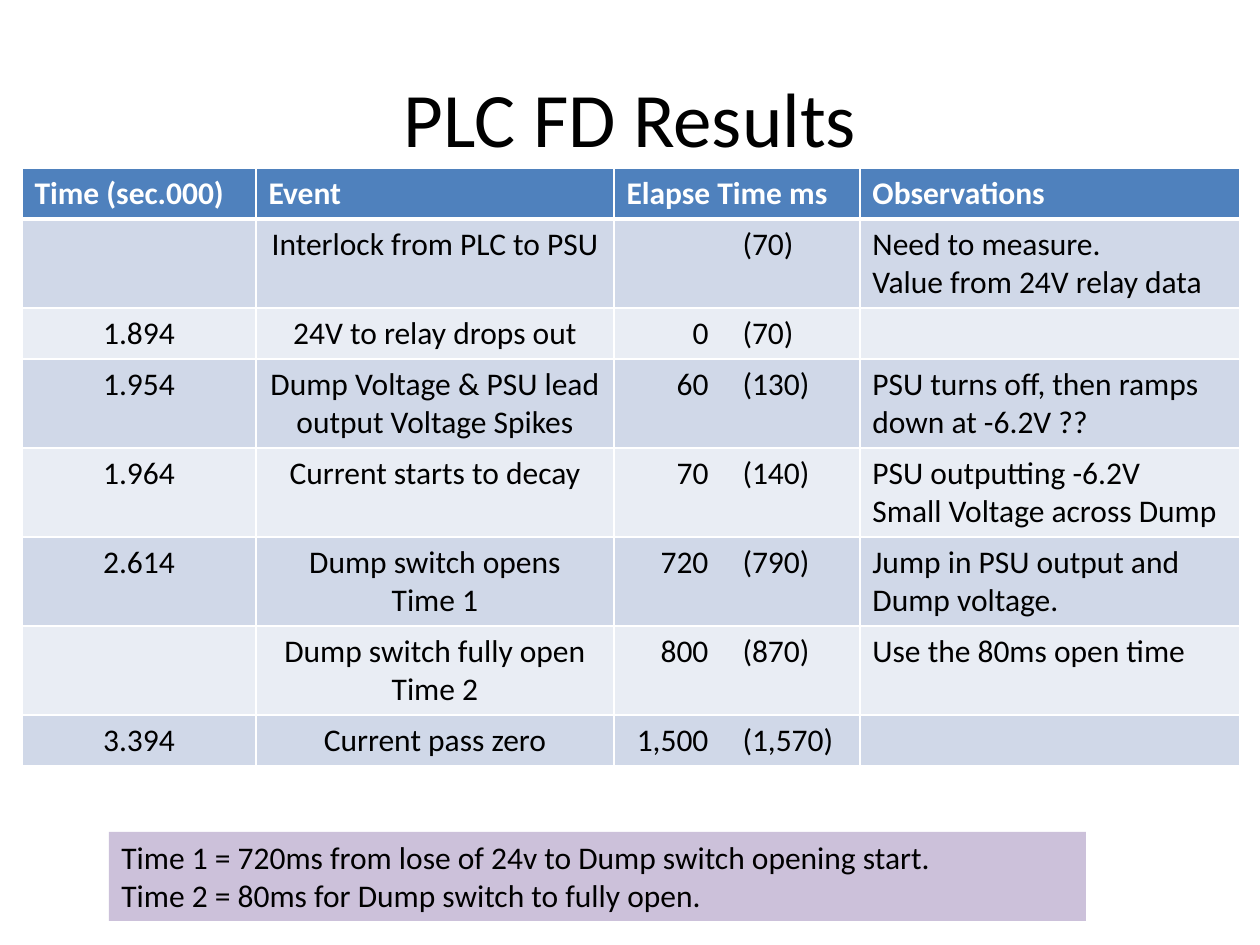
from lxml import etree
from pptx import Presentation
from pptx import util as u
from pptx.dml.color import RGBColor
from pptx.enum import shapes, text
from pptx.oxml import ns

PX = 914400 // 126
FONT = "Calibri"
BLACK = RGBColor(0x00, 0x00, 0x00)
WHITE = RGBColor(0xFF, 0xFF, 0xFF)
BLUE = RGBColor(0x4F, 0x81, 0xBD)
BANDS = (RGBColor(0xD0, 0xD8, 0xE8), RGBColor(0xE9, 0xED, 0xF4))
LILAC = RGBColor(0xCC, 0xC1, 0xDA)
LEFT, CENTER = text.PP_ALIGN.LEFT, text.PP_ALIGN.CENTER

COLUMN_WIDTHS = (234, 358, 246, 380)
COLUMN_ALIGNS = (CENTER, CENTER, LEFT, LEFT)
ELAPSED_COLUMN = 2
ELAPSED_TABS = ((82, "r"), (116, "l"))
ONE_LINE, TWO_LINES = 51, 89

HEADINGS = ("Time (sec.000)", "Event", "Elapse Time ms", "Observations")
# Elapsed times are tabbed: from relay drop-out, then from interlock
EVENTS = (
    (TWO_LINES, "", "Interlock from PLC to PSU", "\t\t(70)",
     "Need to measure.\nValue from 24V relay data"),
    (ONE_LINE, "1.894", "24V to relay drops out", "\t0\t(70)", ""),
    (TWO_LINES, "1.954", "Dump Voltage & PSU lead output Voltage Spikes",
     "\t60\t(130)", "PSU turns off, then ramps down at -6.2V ??"),
    (TWO_LINES, "1.964", "Current starts to decay", "\t70\t(140)",
     "PSU outputting -6.2V\nSmall Voltage across Dump"),
    (TWO_LINES, "2.614", "Dump switch opens\nTime 1", "\t720\t(790)",
     "Jump in PSU output and Dump voltage."),
    (TWO_LINES, "", "Dump switch fully open\nTime 2", "\t800\t(870)",
     "Use the 80ms open time"),
    (ONE_LINE, "3.394", "Current pass zero", "\t1,500\t(1,570)", ""),
)
NOTE = ("Time 1 = 720ms from lose of 24v to Dump switch opening start.\n"
        "Time 2 = 80ms for Dump switch to fully open.")


def px(*lengths):
    return [u.Emu(length * PX) for length in lengths]


def write(frame, words, size, color=BLACK, align=LEFT, bold=False):
    frame.text = words
    frame.word_wrap = True
    for para in frame.paragraphs:
        para.alignment = align
        para.font.size = u.Pt(size)
        for span in para.runs:
            span.font.name = FONT
            span.font.size = u.Pt(size)
            span.font.bold = bold
            span.font.color.rgb = color


def set_tabs(para):
    tabs = etree.Element(ns.qn("a:tabLst"))
    for position, align in ELAPSED_TABS:
        etree.SubElement(tabs, ns.qn("a:tab"), pos=str(position * PX), algn=align)
    properties = para._p.get_or_add_pPr()
    default_run = properties.find(ns.qn("a:defRPr"))
    default_run.addprevious(tabs)


def set_borders(cell, bottom):
    properties = cell._tc.get_or_add_tcPr()
    for side, width in (("L", 1), ("R", 1), ("T", 1), ("B", bottom)):
        line = etree.SubElement(properties, ns.qn(f"a:ln{side}"), w=str(u.Pt(width)))
        fill = etree.SubElement(line, ns.qn("a:solidFill"))
        etree.SubElement(fill, ns.qn("a:srgbClr"), val=str(WHITE))


def fill_cell(cell, words, fill, bottom=1, **style):
    set_borders(cell, bottom)
    cell.fill.solid()
    cell.fill.fore_color.rgb = fill
    write(cell.text_frame, words, 18, **style)


def add_title(page, words):
    box = page.shapes.add_textbox(*px(63, 38, 1134, 157))
    box.text_frame.vertical_anchor = text.MSO_ANCHOR.MIDDLE
    write(box.text_frame, words, 44, align=CENTER)


def add_results(page):
    heights = [ONE_LINE] + [event[0] for event in EVENTS]
    table = page.shapes.add_table(
        len(heights), len(HEADINGS),
        *px(22, 168, sum(COLUMN_WIDTHS), sum(heights))).table
    table.horz_banding = False
    for column, width in zip(table.columns, px(*COLUMN_WIDTHS)):
        column.width = width
    for row, height in zip(table.rows, px(*heights)):
        row.height = height

    # Header row
    for column, heading in enumerate(HEADINGS):
        fill_cell(table.cell(0, column), heading, BLUE, bottom=3,
                  color=WHITE, bold=True)

    # Banded event rows
    for row, (_, *values) in enumerate(EVENTS, start=1):
        for column, words in enumerate(values):
            cell = table.cell(row, column)
            fill_cell(cell, words, BANDS[(row - 1) % 2],
                      align=COLUMN_ALIGNS[column])
            if column == ELAPSED_COLUMN:
                set_tabs(cell.text_frame.paragraphs[0])


def add_note(page, words):
    box = page.shapes.add_shape(shapes.MSO_SHAPE.RECTANGLE, *px(109, 832, 977, 89))
    box.shadow.inherit = False
    box.fill.solid()
    box.fill.fore_color.rgb = LILAC
    box.line.fill.background()
    box.text_frame.vertical_anchor = text.MSO_ANCHOR.TOP
    write(box.text_frame, words, 18)


def main():
    deck = Presentation()
    deck.slide_width, deck.slide_height = px(1260, 945)
    page = deck.slides.add_slide(deck.slide_layouts[6])
    add_title(page, "PLC FD Results")
    add_results(page)
    add_note(page, NOTE)
    deck.save("out.pptx")


if __name__ == "__main__":
    main()
